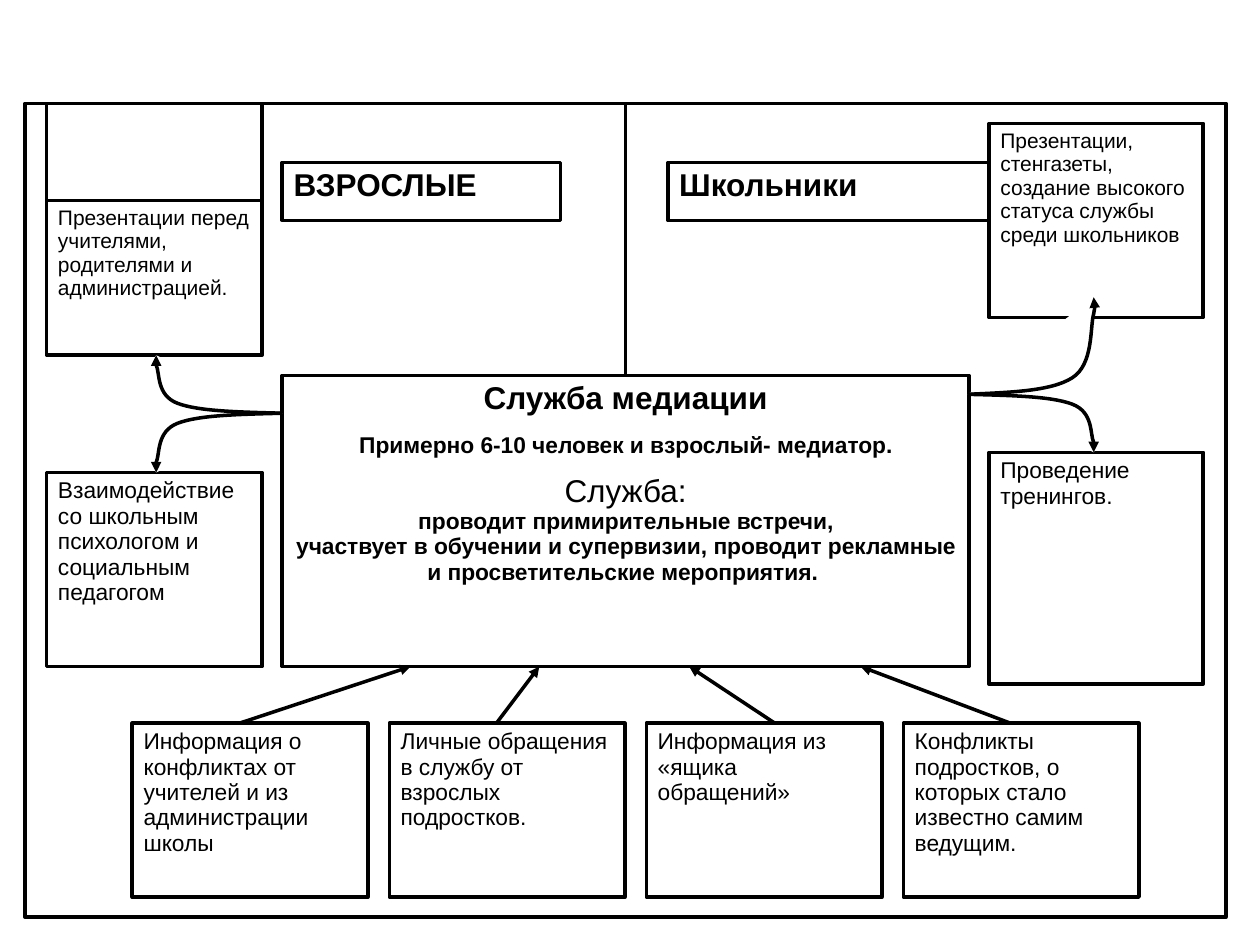
from lxml import etree
from pptx import Presentation
from pptx.dml.color import RGBColor
from pptx.enum.shapes import MSO_CONNECTOR, MSO_SHAPE
from pptx.enum.text import MSO_ANCHOR, PP_ALIGN
from pptx.oxml.ns import qn
from pptx.util import Inches, Pt

RECTANGLE, STRAIGHT = MSO_SHAPE.RECTANGLE, MSO_CONNECTOR.STRAIGHT
TOP = MSO_ANCHOR.TOP
LEFT, CENTER, JUSTIFY = PP_ALIGN.LEFT, PP_ALIGN.CENTER, PP_ALIGN.JUSTIFY
TOP_SIDE = 0

THEME = {
    "font": "Arial",
    "ink": RGBColor(0, 0, 0),
    "paper": RGBColor(255, 255, 255),
    "title": 18, "body": 13, "small": 12,
    "line": 2, "spacing": 0.93,
}

# Content: boxes are (left, top, width, height)
FRAME = (0.2, 0.82, 9.53, 6.46)
CENTRE = (2.24, 2.98, 5.45, 2.31)
# text, size, bold, space before in points
CENTRE_TEXT = [
    ("Служба медиации", "title", True, 0),
    ("Примерно 6-10 человек и взрослый- медиатор.", "body", True, 9.6),
    ("Служба:", "title", False, 8.6),
    (" проводит примирительные встречи, ", "body", True, 0),
    ("участвует в обучении и супервизии, проводит рекламные "
     "и просветительские мероприятия. ", "body", True, 0),
]
# text, arrow start x, arrow tip x
SOURCES = [
    ("Информация о конфликтах от учителей и из администрации школы", 1.9, 3.26),
    ("Личные обращения в службу от взрослых подростков.", 3.94, 4.28),
    ("Информация из «ящика обращений»", 6.15, 5.47),
    ("Конфликты подростков, о которых стало известно самим ведущим.", 8.02, 6.83),
]
SOURCE_LEFT, SOURCE_STEP, SOURCE_TOP = 1.05, 2.04, 5.74
SOURCE_SIZE = (1.87, 1.38)
EMPTY_BOX = (0.37, 0.82, 1.71, 0.77)
# box, text, size, curve start, curve rise, direction
ACTIVITIES = [
    ((0.37, 1.59, 1.71, 1.23),
     "Презентации перед учителями, родителями и администрацией.",
     "small", (2.24, 3.28), -0.46, -1),
    ((7.85, 0.98, 1.7, 1.54),
     "Презентации, стенгазеты, создание высокого статуса службы среди школьников",
     "small", (7.68, 3.13), -0.77, 1),
    ((0.37, 3.75, 1.71, 1.54),
     "Взаимодействие со школьным психологом и социальным педагогом",
     "body", (2.24, 3.28), 0.47, -1),
    ((7.85, 3.59, 1.7, 1.84), "Проведение тренингов.",
     "body", (7.68, 3.13), 0.46, 1),
]
HEADINGS = [
    ((2.24, 1.29, 2.21, 0.46), "ВЗРОСЛЫЕ", JUSTIFY),
    ((5.3, 1.29, 2.55, 0.46), "Школьники", LEFT),
]
# Three Bezier segments after the start: x in inches, y as a share of the rise
CURVE = [
    (0.33, 0.02), (0.66, 0.03), (0.83, 0.17),
    (1, 0.31), (0.97, 0.69), (1, 0.83),
    (1.02, 0.98), (1.01, 0.99), (1, 1),
]

presentation = Presentation()
presentation.slide_width, presentation.slide_height = Inches(10), Inches(7.5)
slide = presentation.slides.add_slide(presentation.slide_layouts[6])


def style_line(line):
    line.color.rgb = THEME["ink"]
    line.width = Pt(THEME["line"])


def style_shape(shape):
    shape.shadow.inherit = False
    shape.fill.solid()
    shape.fill.fore_color.rgb = THEME["paper"]
    style_line(shape.line)


def add_arrowhead(line):
    etree.SubElement(line._get_or_add_ln(), qn("a:tailEnd"), type="triangle")


def add_box(box, rows=(), alignment=LEFT):
    shape = slide.shapes.add_shape(RECTANGLE, *map(Inches, box))
    style_shape(shape)
    if not rows:
        return shape
    frame = shape.text_frame
    frame.word_wrap, frame.vertical_anchor = True, TOP
    frame.margin_left = frame.margin_right = Inches(0.09)
    frame.margin_top = frame.margin_bottom = Inches(0.05)
    frame.text = "\n".join(row[0] for row in rows)
    for paragraph, (_, size, bold, before) in zip(frame.paragraphs, rows):
        paragraph.alignment = alignment
        paragraph.line_spacing = THEME["spacing"]
        paragraph.space_before = Pt(before)
        for run in paragraph.runs:
            run.font.name = THEME["font"]
            run.font.size = Pt(THEME[size])
            run.font.bold = bold
            run.font.color.rgb = THEME["ink"]
    return shape


def add_line(start, end):
    connector = slide.shapes.add_connector(STRAIGHT, *map(Inches, (*start, *end)))
    style_line(connector.line)
    etree.SubElement(connector._element.spPr, qn("a:effectLst"))
    return connector


def add_curve(start, rise, direction):
    points = [(Inches(start[0] + direction * x), Inches(start[1] + rise * y))
              for x, y in CURVE]
    builder = slide.shapes.build_freeform(*map(Inches, start))
    builder.add_line_segments(points, close=False)
    curve = builder.convert_to_shape()
    # Every three straight segments become one Bezier segment
    outline = next(curve._element.iter(qn("a:path")))
    segments = outline.findall(qn("a:lnTo"))
    for first in range(0, len(segments), 3):
        bezier = etree.SubElement(outline, qn("a:cubicBezTo"))
        for segment in segments[first:first + 3]:
            bezier.append(segment[0])
            outline.remove(segment)
    style_shape(curve)
    add_arrowhead(curve.line)


# Frame and the central service
frame_box = add_box(FRAME)
centre_box = add_box(CENTRE, CENTRE_TEXT, CENTER)

# Sources of cases, each with an arrow to the service
centre_bottom = CENTRE[1] + CENTRE[3]
for index, (text, start_x, tip_x) in enumerate(SOURCES):
    left = SOURCE_LEFT + index * SOURCE_STEP
    add_box((left, SOURCE_TOP, *SOURCE_SIZE), [(text, "body", False, 0)])
    arrow = add_line((start_x, SOURCE_TOP), (tip_x, centre_bottom))
    add_arrowhead(arrow.line)

# Activities, each with a curved arrow from the service
add_box(EMPTY_BOX)
for box, text, size, start, rise, direction in ACTIVITIES:
    add_box(box, [(text, size, False, 0)])
    add_curve(start, rise, direction)

# Divider and headings of the two halves
middle = FRAME[0] + FRAME[2] / 2
divider = add_line((middle, FRAME[1]), (middle, CENTRE[1]))
divider.begin_connect(frame_box, TOP_SIDE)
divider.end_connect(centre_box, TOP_SIDE)
for box, text, alignment in HEADINGS:
    add_box(box, [(text, "title", True, 0)], alignment)

presentation.save("out.pptx")
